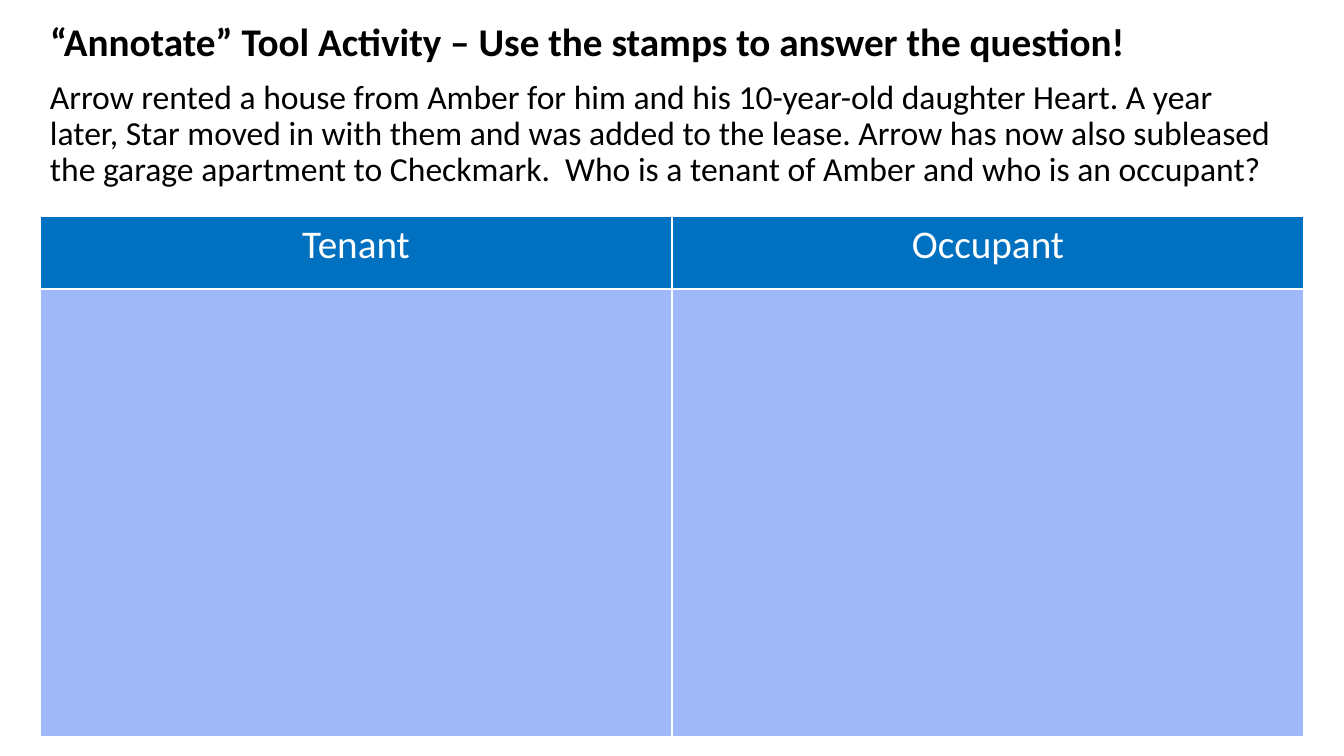
from lxml import etree
from pptx import Presentation
from pptx.dml.color import RGBColor
from pptx.enum.text import MSO_ANCHOR, MSO_AUTO_SIZE, PP_ALIGN
from pptx.oxml.ns import qn
from pptx.util import Emu, Pt

TOP = MSO_ANCHOR.TOP
NO_FIT = MSO_AUTO_SIZE.NONE
LEFT, CENTER = PP_ALIGN.LEFT, PP_ALIGN.CENTER

FONT = "Calibri"
BLACK = RGBColor(0x00, 0x00, 0x00)
WHITE = RGBColor(0xFF, 0xFF, 0xFF)
HEADER_BLUE = RGBColor(0x00, 0x70, 0xC0)
BODY_BLUE = RGBColor(0x9E, 0xB8, 0xF8)

TITLE = "“Annotate” Tool Activity – Use the stamps to answer the question!"
STORY = (
    "Arrow rented a house from Amber for him and his 10-year-old daughter Heart. "
    "A year later, Star moved in with them and was added to the lease. "
    "Arrow has now also subleased the garage apartment to Checkmark.  "
    "Who is a tenant of Amber and who is an occupant?"
)
HEADINGS = ["Tenant", "Occupant"]


def px(n):
    return Emu(round(n * 914400 / 100.8))


def add_run(p, text, size, color, bold=False):
    r = p.add_run()
    r.text = text
    r.font.name = FONT
    r.font.size = Pt(size)
    r.font.bold = bold
    r.font.color.rgb = color


def fill_text(sp, text, size, bold=False):
    tf = sp.text_frame
    tf.word_wrap = True
    tf.auto_size = NO_FIT
    tf.vertical_anchor = TOP
    p = tf.paragraphs[0]
    p.alignment = LEFT
    p.line_spacing = 0.9
    add_run(p, text, size, BLACK, bold)


def set_borders(cell, color, width):
    tcPr = cell._tc.get_or_add_tcPr()
    # Border lines come before the fill in a cell's properties
    for i, side in enumerate(("a:lnL", "a:lnR", "a:lnT", "a:lnB")):
        ln = etree.Element(qn(side), w=str(Pt(width)))
        fill = etree.SubElement(ln, qn("a:solidFill"))
        etree.SubElement(fill, qn("a:srgbClr"), val=str(color))
        tcPr.insert(i, ln)


def add_answer_table(s, x, y, col_width, row_heights):
    cols = len(HEADINGS)
    frame = s.shapes.add_table(len(row_heights), cols, px(x), px(y),
                               px(col_width * cols), px(sum(row_heights)))
    table = frame.table
    for col in table.columns:
        col.width = px(col_width)
    for row, height in zip(table.rows, row_heights):
        row.height = px(height)
    for cell in table.iter_cells():
        cell.fill.solid()
        cell.fill.fore_color.rgb = BODY_BLUE
        set_borders(cell, WHITE, 1)
    for cell, heading in zip(table.rows[0].cells, HEADINGS):
        cell.fill.fore_color.rgb = HEADER_BLUE
        p = cell.text_frame.paragraphs[0]
        p.alignment = CENTER
        add_run(p, heading, 28, WHITE)


def main():
    prs = Presentation()
    prs.slide_width, prs.slide_height = px(1344), px(756)
    s = prs.slides.add_slide(prs.slide_layouts[5])

    # Title
    title = s.shapes.title
    title.left, title.top, title.width, title.height = map(px, (40, 18, 1250, 53))
    fill_text(title, TITLE, 28, bold=True)

    # Story with the question
    story = s.shapes.add_textbox(px(40), px(75), px(1250), px(121))
    fill_text(story, STORY, 24)

    # Answer area
    add_answer_table(s, 40, 216, 632, [73, 448])

    prs.save("out.pptx")


if __name__ == "__main__":
    main()
